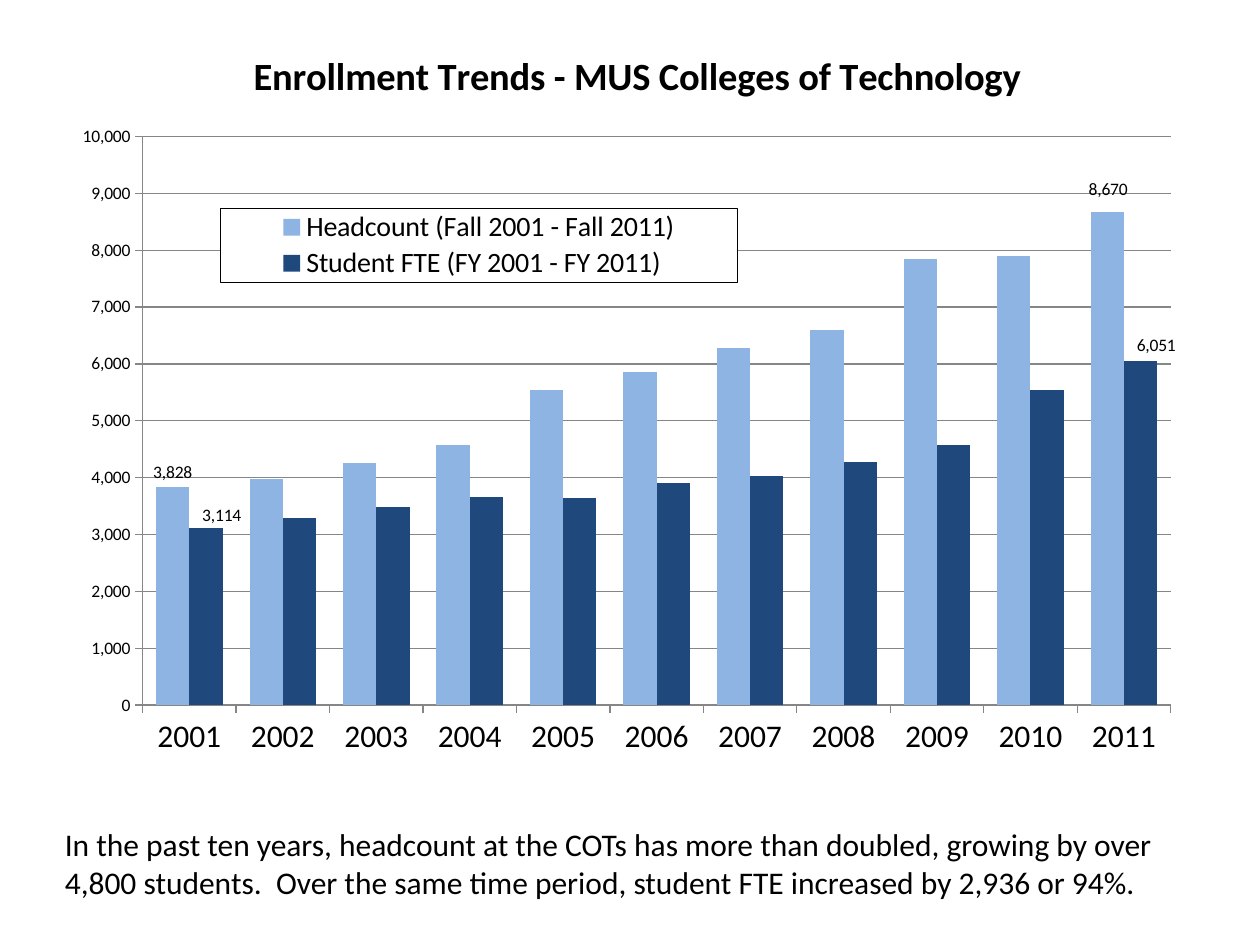
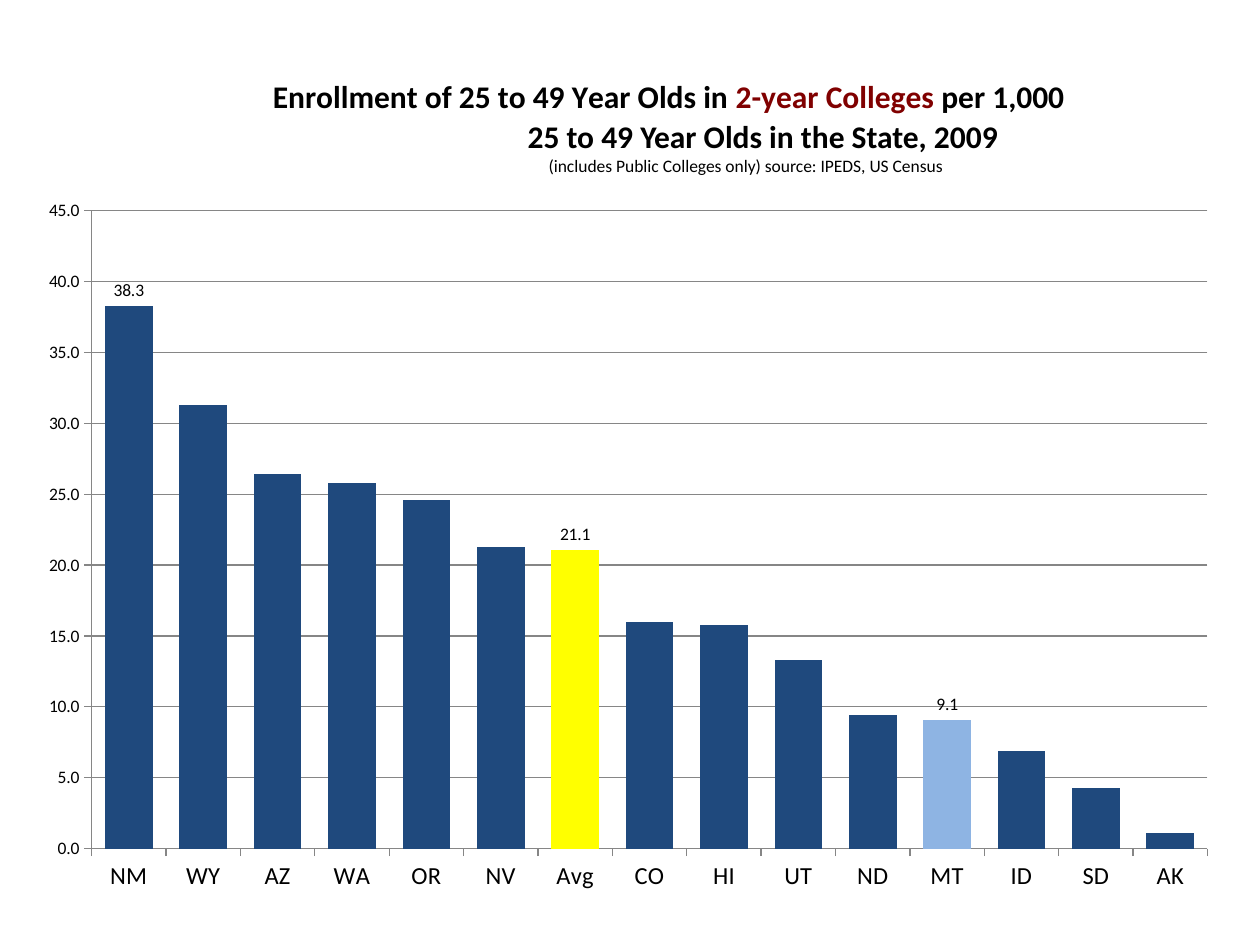
"""Builds two slides of column charts on college enrollment."""
from lxml import etree
from pptx import Presentation
from pptx.chart.data import CategoryChartData
from pptx.dml.color import RGBColor
from pptx.enum.chart import XL_CHART_TYPE, XL_LABEL_POSITION, XL_LEGEND_POSITION, XL_TICK_MARK
from pptx.enum.text import MSO_AUTO_SIZE
from pptx.oxml import parse_xml
from pptx.oxml.ns import nsdecls, qn
from pptx.util import Pt

COLUMNS = XL_CHART_TYPE.COLUMN_CLUSTERED
ABOVE_BAR = XL_LABEL_POSITION.OUTSIDE_END
LEGEND_RIGHT = XL_LEGEND_POSITION.RIGHT
TICK_OUTSIDE = XL_TICK_MARK.OUTSIDE
GROW_TO_TEXT = MSO_AUTO_SIZE.SHAPE_TO_FIT_TEXT

FONT = "Calibri"
COLORS = {
    "text": "000000",
    "paper": "FFFFFF",
    "grid": "868686",
    "light": "8EB4E3",
    "dark": "1F497D",
    "average": "FFFF00",
    "accent": "800000",
}

TREND_FRAME = (16, 12, 682, 446)
STATE_FRAME = (19, 22, 682, 495)

YEARS = [str(year) for year in range(2001, 2012)]
HEADCOUNT = [3828, 3981, 4259, 4581, 5542, 5865, 6271, 6604, 7847, 7898, 8670]
STUDENT_FTE = [3114, 3294, 3489, 3663, 3641, 3910, 4033, 4277, 4570, 5538, 6051]
STATES = ["NM", "WY", "AZ", "WA", "OR", "NV", "Avg", "CO", "HI", "UT", "ND", "MT", "ID", "SD", "AK"]
STATE_RATES = [38.3, 31.3, 26.4, 25.8, 24.6, 21.3, 21.1, 16.0, 15.8, 13.3, 9.4, 9.1, 6.9, 4.3, 1.1]


def color(name):
    """Return the named colour."""
    return RGBColor.from_string(COLORS[name])


def style_font(font, size, bold=False, shade="text"):
    """Give a font the deck's typeface and the given look."""
    font.name = FONT
    font.size = Pt(size)
    font.bold = bold
    font.color.rgb = color(shade)


def add_span(para, text, size, bold=False, shade="text"):
    """Add one styled run to a paragraph."""
    span = para.add_run()
    span.text = text
    style_font(span.font, size, bold, shade)


def place(element, index, frame, lengths, **modes):
    """Lay out a chart part by left, top, width and height in points."""
    for layout in element.findall(qn("c:layout")):
        element.remove(layout)
    layout = etree.Element(qn("c:layout"))
    manual = etree.SubElement(layout, qn("c:manualLayout"))
    for tag, mode in modes.items():
        etree.SubElement(manual, qn(f"c:{tag}")).set("val", mode)
    for tag, length, whole in zip("xywh", lengths, frame[2:] * 2):
        etree.SubElement(manual, qn(f"c:{tag}")).set("val", str(length / whole))
    element.insert(index, layout)


def paint(bars, shade):
    """Fill a series or a single bar with a solid colour."""
    bars.format.fill.solid()
    bars.format.fill.fore_color.rgb = color(shade)


def add_column_chart(slide, frame, categories, series, number_format, gap, plot_area):
    """Add a clustered column chart; series maps names to values and a colour."""
    data = CategoryChartData(number_format=number_format)
    data.categories = categories
    for name, (values, _) in series.items():
        data.add_series(name, values)
    chart = slide.shapes.add_chart(COLUMNS, *map(Pt, frame), data).chart
    style_font(chart.font, 10)
    chart.has_legend = False
    plot = chart.plots[0]
    plot.gap_width = gap
    plot.overlap = 0
    plot.vary_by_categories = False
    for bars, (_, shade) in zip(plot.series, series.values()):
        paint(bars, shade)
    area = chart._chartSpace.find(".//" + qn("c:plotArea"))
    place(area, 0, frame, plot_area, layoutTarget="inner", xMode="edge", yMode="edge")
    return chart


def style_axes(chart, category_size, maximum, step, number_format):
    """Style both axes and the gridlines."""
    values = chart.value_axis
    values.minimum_scale = 0
    values.maximum_scale = maximum
    values.major_unit = step
    values.has_major_gridlines = True
    values.tick_labels.number_format = number_format
    values.tick_labels.number_format_is_linked = False
    style_font(values.tick_labels.font, 10)
    style_font(chart.category_axis.tick_labels.font, category_size)
    for axis in (values, chart.category_axis):
        axis.major_tick_mark = TICK_OUTSIDE
    for part in (values, chart.category_axis, values.major_gridlines):
        part.format.line.color.rgb = color("grid")
        part.format.line.width = Pt(0.75)


def add_chart_title(chart, frame, spans, corner):
    """Write a chart title from (text, size, bold, shade) spans."""
    chart.has_title = True
    para = chart.chart_title.text_frame.paragraphs[0]
    for span in spans:
        add_span(para, *span)
    title = chart._chartSpace.find(".//" + qn("c:title"))
    place(title, 1, frame, corner, xMode="edge", yMode="edge")


def label_bars(bars, frame, shifts):
    """Show the values of chosen bars, each moved by a small shift."""
    bars.data_labels.show_value = False
    for index, shift in shifts.items():
        bars.points[index].data_label.position = ABOVE_BAR
        if any(shift):
            place(bars._element.findall(".//" + qn("c:dLbl"))[-1], 1, frame, shift)


def add_legend(chart, frame, size, bounds):
    """Add a framed legend over the plot."""
    chart.has_legend = True
    legend = chart.legend
    legend.position = LEGEND_RIGHT
    legend.include_in_layout = False
    style_font(legend.font, size)
    element = legend._element
    place(element, 1, frame, bounds, xMode="edge", yMode="edge")
    element.find(qn("c:txPr")).addprevious(parse_xml(
        f'<c:spPr {nsdecls("c", "a")}>'
        f'<a:solidFill><a:srgbClr val="{COLORS["paper"]}"/></a:solidFill>'
        f'<a:ln w="{Pt(0.25)}"><a:solidFill><a:srgbClr val="{COLORS["text"]}"/></a:solidFill></a:ln>'
        '</c:spPr>'))


def add_text(slide, bounds, lines, inset):
    """Add a wrapped text box from lines of (indent, span)."""
    box = slide.shapes.add_textbox(*map(Pt, bounds))
    text = box.text_frame
    text.word_wrap = True
    text.auto_size = GROW_TO_TEXT
    text.margin_left = text.margin_right = Pt(2 * inset)
    text.margin_top = text.margin_bottom = Pt(inset)
    for number, (indent, span) in enumerate(lines):
        para = text.add_paragraph() if number else text.paragraphs[0]
        para._p.get_or_add_pPr().set("marL", str(Pt(indent)))
        add_span(para, *span)


def add_trend_slide(deck):
    """Add the slide on enrollment by year."""
    slide = deck.slides.add_slide(deck.slide_layouts[6])
    note = ("In the past ten years, headcount at the COTs has more than doubled, "
            "growing by over 4,800 students.  Over the same time period, "
            "student FTE increased by 2,936 or 94%.")
    add_text(slide, (30, 468, 654, 51), [(0, (note, 18))], 3.6)
    series = {
        "Headcount (Fall 2001 - Fall 2011)": (HEADCOUNT, "light"),
        "Student FTE (FY 2001 - FY 2011)": (STUDENT_FTE, "dark"),
    }
    chart = add_column_chart(slide, TREND_FRAME, YEARS, series, "#,##0", 81,
                             (65.5, 66, 587.5, 325))
    style_axes(chart, 18, 10000, 1000, "#,##0")
    add_chart_title(chart, TREND_FRAME,
                    [("Enrollment Trends - MUS Colleges of Technology", 22, True)], (125, 12))
    add_legend(chart, TREND_FRAME, 16, (110, 107, 295.5, 42.4))
    headcount, student_fte = chart.plots[0].series
    label_bars(headcount, TREND_FRAME, {0: (0, 0), 10: (0.5, -4.5)})
    label_bars(student_fte, TREND_FRAME, {0: (9, 1.5), 10: (9, -0.5)})


def add_state_slide(deck):
    """Add the slide that compares the states."""
    slide = deck.slides.add_slide(deck.slide_layouts[6])
    chart = add_column_chart(slide, STATE_FRAME, STATES,
                             {"Series 1": (STATE_RATES, "dark")}, "0.0", 56,
                             (33.4, 98.5, 637.7, 364.5))
    style_axes(chart, 14, 45, 5, "0.0")
    add_chart_title(chart, STATE_FRAME, [
        ("Enrollment of 25 to 49 Year Olds in ", 18, True),
        ("2-year Colleges", 18, True, "accent"),
        (" per 1,000", 18, True),
    ], (134.7, 19.4))
    add_text(slide, (301.5, 67, 300, 34), [
        (0, ("25 to 49 Year Olds in the State, 2009", 18, True)),
        (12, ("(includes Public Colleges only) source: IPEDS, US Census", 10)),
    ], 0)
    bars = chart.plots[0].series[0]
    for state, shade in {"Avg": "average", "MT": "light"}.items():
        paint(bars.points[STATES.index(state)], shade)
    label_bars(bars, STATE_FRAME,
               {STATES.index(state): (0, 0) for state in ("NM", "Avg", "MT")})


def main():
    """Build and save the deck."""
    deck = Presentation()
    deck.slide_width = Pt(720)
    deck.slide_height = Pt(540)
    add_trend_slide(deck)
    add_state_slide(deck)
    deck.save("out.pptx")


if __name__ == "__main__":
    main()
